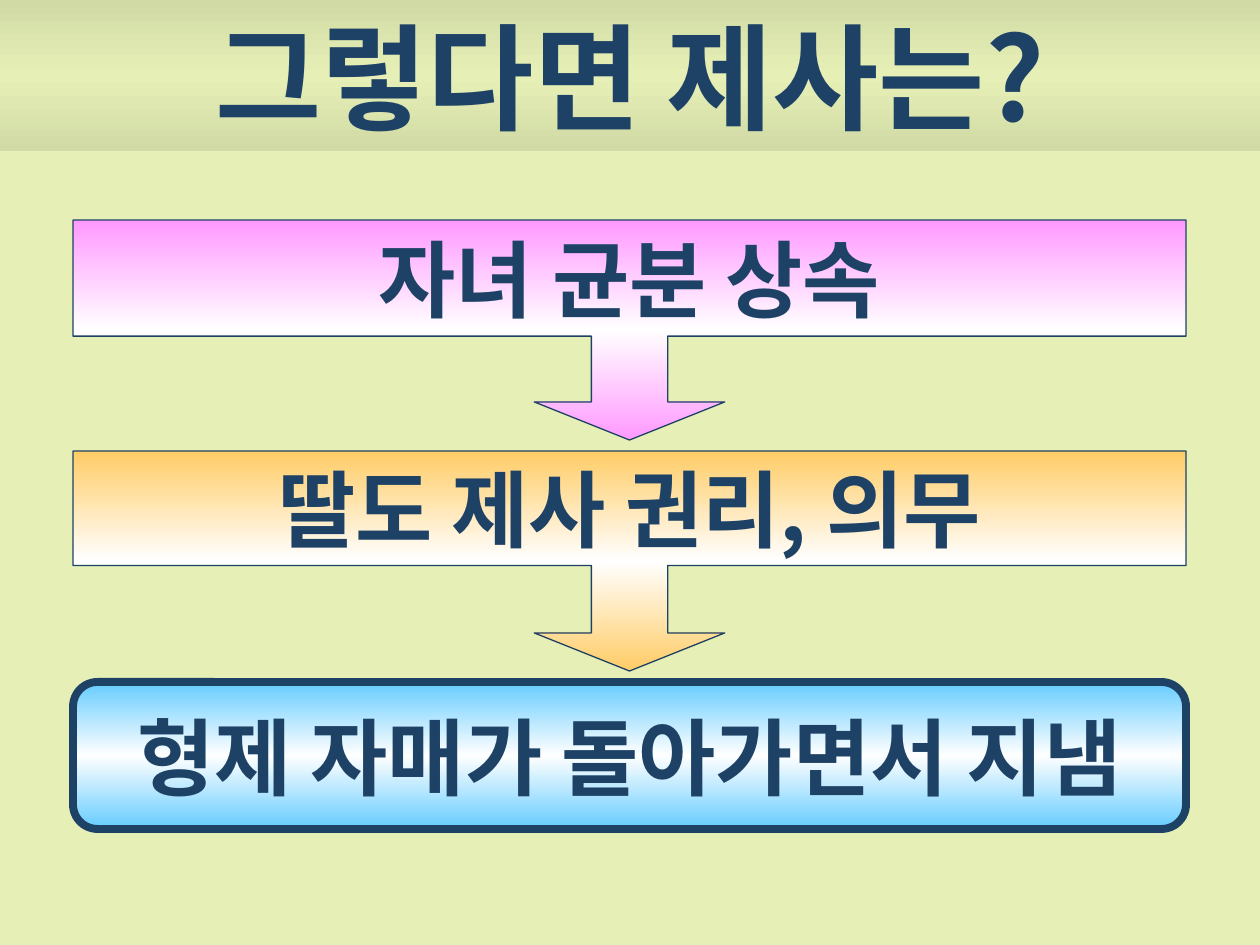
import copy
import dataclasses

import pptx
import pptx.dml.color
import pptx.enum.shapes
import pptx.enum.text
import pptx.oxml
import pptx.oxml.ns
import pptx.util

EMU_PER_PX = 914400 / 126
SHAPES = pptx.enum.shapes.MSO_SHAPE


@dataclasses.dataclass(frozen=True)
class Theme:
    """Colours and type of the slide."""
    font: str = "Noto Sans CJK KR"
    background: str = "E6F0B6"
    band: str = "D1DAA5"
    ink: str = "1E4266"
    pink: str = "FF99FF"
    orange: str = "FFCC66"
    blue: str = "66CCFF"
    white: str = "FFFFFF"
    title_size: int = 66
    step_size: int = 48


THEME = Theme()


def emu(px):
    """Turn pixels into EMU."""
    return pptx.util.Emu(round(px * EMU_PER_PX))


def rgb(value):
    """Turn a hex string into a colour."""
    return pptx.dml.color.RGBColor.from_string(value)


def fill_gradient(shape, edge, middle):
    """Fill a shape from edge to middle to edge, top to bottom."""
    shape.fill.gradient()
    shape.fill.gradient_angle = 270
    stop_list = shape._element.spPr.find(".//" + pptx.oxml.ns.qn("a:gsLst"))
    stop_list.append(copy.deepcopy(stop_list[-1]))
    stops = zip(shape.fill.gradient_stops, (0, 0.5, 1), (edge, middle, edge))
    for stop, position, color in stops:
        stop.position = position
        stop.color.rgb = rgb(color)


def write_text(shape, text, size, color=THEME.ink, bold=True, wrap=False):
    """Write one centred line of text into a shape."""
    frame = shape.text_frame
    frame.auto_size = pptx.enum.text.MSO_AUTO_SIZE.NONE
    frame.word_wrap = wrap
    frame.vertical_anchor = pptx.enum.text.MSO_ANCHOR.MIDDLE
    paragraph = frame.paragraphs[0]
    paragraph.alignment = pptx.enum.text.PP_ALIGN.CENTER
    paragraph.space_before = pptx.util.Pt(0)
    run = paragraph.add_run()
    run.text = text
    font = run.font
    font.name, font.size, font.bold = THEME.font, pptx.util.Pt(size), bold
    font.color.rgb = rgb(color)
    properties = run._r.get_or_add_rPr()
    east_asian = pptx.oxml.parse_xml(
        f'<a:ea {pptx.oxml.ns.nsdecls("a")} typeface="{THEME.font}"/>')
    properties.find(pptx.oxml.ns.qn("a:latin")).addnext(east_asian)


def add_title_band(slide, left, top, width, height):
    """Place the title as a shaded band."""
    title = slide.shapes.title
    title.left, title.top = emu(left), emu(top)
    title.width, title.height = emu(width), emu(height)
    fill_gradient(title, THEME.band, THEME.background)
    write_text(title, "그렇다면 제사는?", size=THEME.title_size, wrap=True)


def add_step(slide, box, kind, adjustments, edge, line_width, text):
    """Add one outlined, shaded step with its text."""
    shape = slide.shapes.add_shape(kind, *map(emu, box))
    shape.shadow.inherit = False
    for index, value in enumerate(adjustments):
        shape.adjustments[index] = value
    fill_gradient(shape, edge, THEME.white)
    shape.line.color.rgb = rgb(THEME.ink)
    shape.line.width = pptx.util.Pt(line_width)
    write_text(shape, text, size=THEME.step_size)


def add_flow(slide, left, top, width, height):
    """Stack two arrow callouts above the rounded conclusion."""
    pitch, callout_height = 231, 220
    callouts = (
        ("자녀 균분 상속", THEME.pink, 0.528),
        ("딸도 제사 권리, 의무", THEME.orange, 0.52),
    )
    for index, (text, edge, body_share) in enumerate(callouts):
        box = (left, top + index * pitch, width, callout_height)
        add_step(slide, box, SHAPES.DOWN_ARROW_CALLOUT,
                 (0.347, 0.433, 0.173, body_share), edge, 0.75, text)
    offset = len(callouts) * pitch
    add_step(slide, (left, top + offset, width, height - offset),
             SHAPES.ROUNDED_RECTANGLE, (0.167,), THEME.blue, 4.5,
             "형제 자매가 돌아가면서 지냄")


def main():
    """Build and save the slide."""
    presentation = pptx.Presentation()
    presentation.slide_width, presentation.slide_height = emu(1260), emu(945)
    slide = presentation.slides.add_slide(presentation.slide_layouts[5])
    slide.background.fill.solid()
    slide.background.fill.fore_color.rgb = rgb(THEME.background)
    add_title_band(slide, 0, 0, 1260, 151)
    add_flow(slide, 73, 220, 1113, 609)
    presentation.save("out.pptx")


if __name__ == "__main__":
    main()
